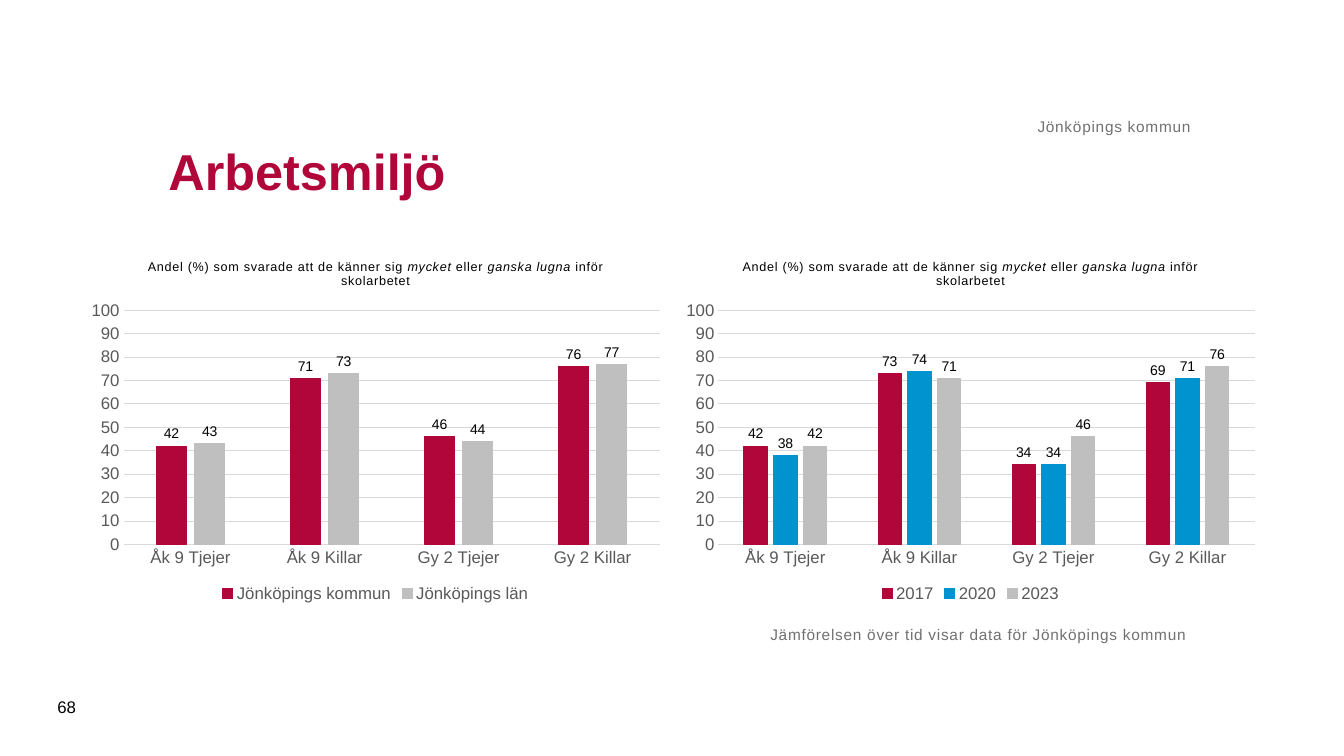
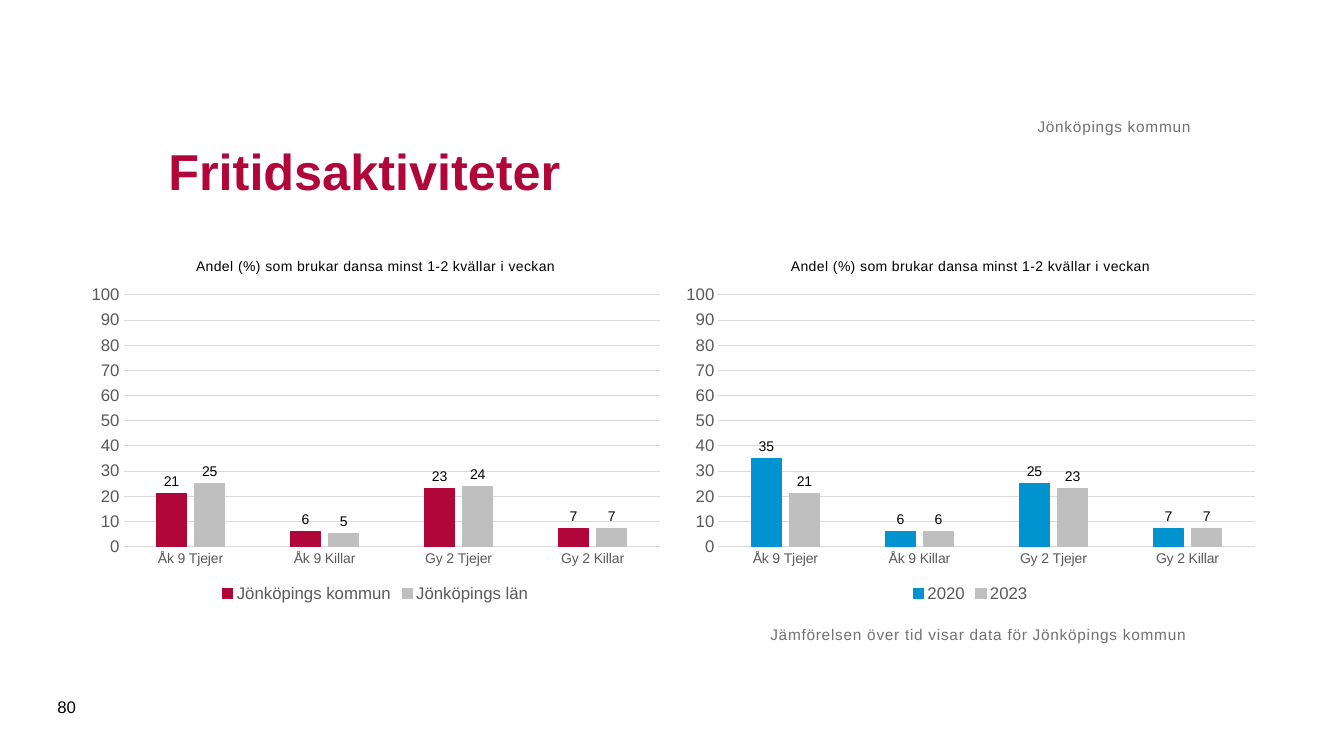
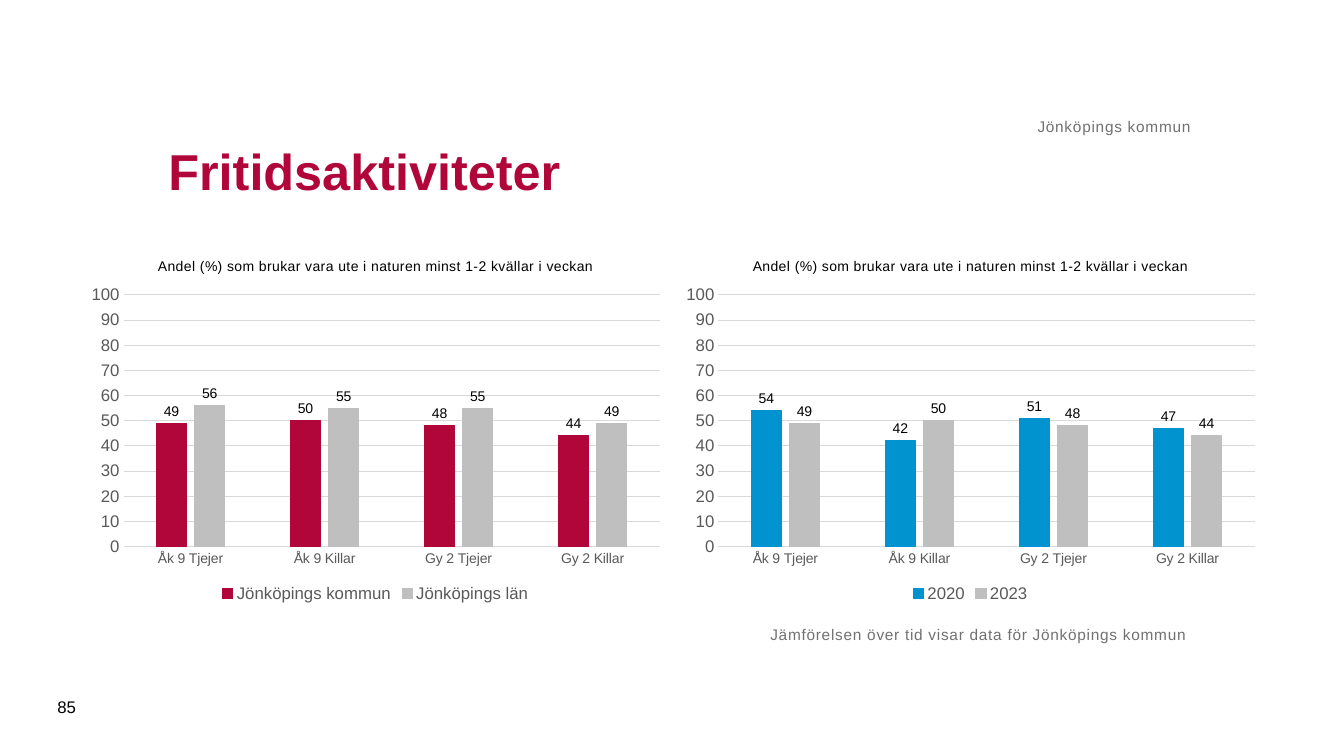
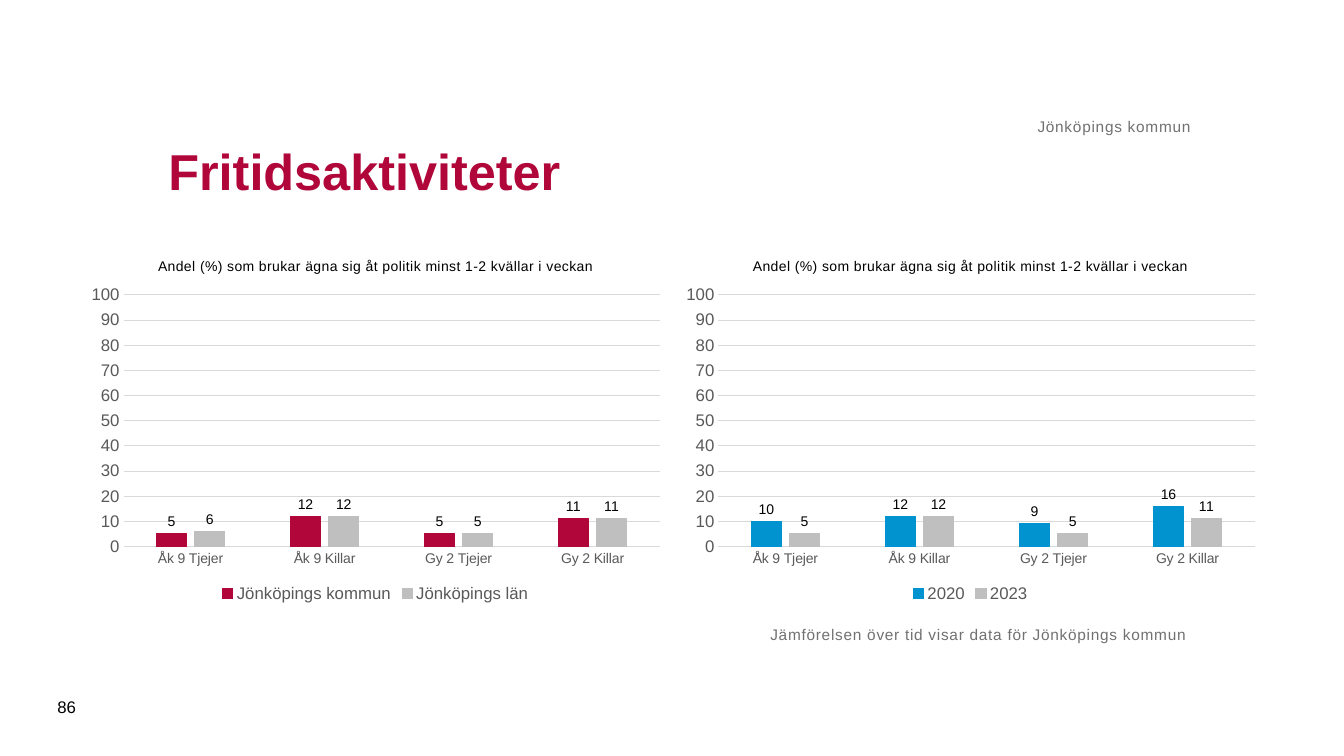
from pptx import Presentation
from pptx.chart.data import CategoryChartData
from pptx.dml.color import RGBColor
from pptx.enum.chart import XL_CHART_TYPE, XL_LABEL_POSITION, XL_LEGEND_POSITION, XL_TICK_MARK
from pptx.enum.text import MSO_ANCHOR, MSO_AUTO_SIZE, PP_ALIGN
from pptx.util import Inches, Pt

COLOURS = {
    "crimson": "B1063A",
    "blue": "0093D0",
    "silver": "BFBFBF",
    "grid": "D9D9D9",
    "axis": "595959",
    "caption": "717171",
    "black": "000000",
}

# Shared places in inches: left, top, width, height
SLIDE_W, SLIDE_H = 13.33, 7.5
CHART_LEFT, CHART_TOP, CHART_W, CHART_H = 0.79, 2.4, 5.87, 3.62
CHART_STEP = 5.9
TITLE_BOX = (1.57, 0.98, 10.24, 1.42)
MUNICIPALITY_BOX = (1.57, 0.62, 10.24, 0.73)
COMPARISON_BOX = (7.64, 6.2, 5.31, 0.94)
NUMBER_BOX = (0.47, 6.81, 0.57, 0.4)

# Shared text formats
TITLE_FONT = {"size": 36, "colour": "crimson", "bold": True}
CAPTION_FONT = {"size": 11, "colour": "caption"}
AXIS_FONT = {"size": 12, "colour": "axis"}
LABEL_FONT = {"size": 10, "colour": "black"}
NUMBER_FONT = {"size": 12, "colour": "black"}
NO_INSETS = {"margin_left": 0, "margin_top": 0, "margin_right": 0, "margin_bottom": 0}

VALUE_FORMAT = "#,##0;#,##0"
MUNICIPALITY = "Jönköpings kommun"
COUNTY = "Jönköpings län"
COMPARISON = "Jämförelsen över tid visar data för Jönköpings kommun"
GROUPS = ["Åk 9 Tjejer", "Åk 9 Killar", "Gy 2 Tjejer", "Gy 2 Killar"]
SERIES_COLOURS = {
    MUNICIPALITY: "crimson",
    COUNTY: "silver",
    "2017": "crimson",
    "2020": "blue",
    "2023": "silver",
}

# A question is a list of (text, italic) pieces
SLIDES = [
    {
        "number": "68",
        "title": "Arbetsmiljö",
        "question": [
            ("Andel (%) som svarade att de känner sig ", False),
            ("mycket", True),
            (" eller ", False),
            ("ganska lugna", True),
            (" inför skolarbetet", False),
        ],
        "question_size": 9,
        "question_spacing": 0.5,
        "group_size": 12,
        "municipality": [42, 71, 46, 76],
        "county": [43, 73, 44, 77],
        "earlier": {"2017": [42, 73, 34, 69], "2020": [38, 74, 34, 71]},
    },
    {
        "number": "80",
        "title": "Fritidsaktiviteter",
        "question": [("Andel (%) som brukar dansa minst 1-2 kvällar i veckan", False)],
        "municipality": [21, 6, 23, 7],
        "county": [25, 5, 24, 7],
        "earlier": {"2020": [35, 6, 25, 7]},
    },
    {
        "number": "85",
        "title": "Fritidsaktiviteter",
        "question": [
            ("Andel (%) som brukar vara ute i naturen minst 1-2 kvällar i veckan", False)
        ],
        "municipality": [49, 50, 48, 44],
        "county": [56, 55, 55, 49],
        "earlier": {"2020": [54, 42, 51, 47]},
    },
    {
        "number": "86",
        "title": "Fritidsaktiviteter",
        "question": [
            ("Andel (%) som brukar ägna sig åt politik minst 1-2 kvällar i veckan", False)
        ],
        "municipality": [5, 12, 5, 11],
        "county": [6, 12, 5, 11],
        "earlier": {"2020": [10, 12, 9, 16]},
    },
]


def rgb(colour):
    return RGBColor.from_string(COLOURS[colour])


def set_all(target, values):
    for attribute, value in values.items():
        setattr(target, attribute, value)


def style_font(font, size, colour, bold=False, italic=False):
    set_all(font, {"name": "Arial", "size": Pt(size), "bold": bold, "italic": italic})
    font.color.rgb = rgb(colour)


def space_letters(run, points):
    run._r.get_or_add_rPr().set("spc", str(round(points * 100)))


def style_line(line, colour):
    line.color.rgb = rgb(colour)
    line.width = Pt(0.75)


def fill_frame(frame, text, font, anchor, align=PP_ALIGN.LEFT, insets=None, spacing=0):
    set_all(frame, {
        "word_wrap": True,
        "auto_size": MSO_AUTO_SIZE.NONE,
        "vertical_anchor": anchor,
        **(insets or {}),
    })
    paragraph = frame.paragraphs[0]
    paragraph.alignment = align
    run = paragraph.add_run()
    run.text = text
    style_font(run.font, **font)
    if spacing:
        space_letters(run, spacing)


def add_text(slide, box, *args, **kwargs):
    frame = slide.shapes.add_textbox(*map(Inches, box)).text_frame
    fill_frame(frame, *args, **kwargs)


def add_title(slide, text):
    title = slide.shapes.title
    set_all(title, dict(zip(("left", "top", "width", "height"), map(Inches, TITLE_BOX))))
    fill_frame(title.text_frame, text, TITLE_FONT, MSO_ANCHOR.MIDDLE)


def add_question(chart, content):
    chart.has_title = True
    chart.chart_title.include_in_layout = False
    paragraph = chart.chart_title.text_frame.paragraphs[0]
    for text, italic in content["question"]:
        run = paragraph.add_run()
        run.text = text
        style_font(run.font, content.get("question_size", 10), "black", italic=italic)
        space_letters(run, content.get("question_spacing", 0.4))


def style_axes(chart, group_size):
    groups, percent = chart.category_axis, chart.value_axis
    for axis, size in ((groups, group_size), (percent, 12)):
        set_all(axis, {
            "major_tick_mark": XL_TICK_MARK.NONE,
            "minor_tick_mark": XL_TICK_MARK.NONE,
        })
        style_font(axis.tick_labels.font, size, "axis")
    style_line(groups.format.line, "grid")
    set_all(percent, {
        "minimum_scale": 0,
        "maximum_scale": 100,
        "major_unit": 10,
        "has_major_gridlines": True,
    })
    percent.format.line.fill.background()
    style_line(percent.major_gridlines.format.line, "grid")
    set_all(percent.tick_labels, {"number_format": VALUE_FORMAT,
                                  "number_format_is_linked": False})


def style_series(series):
    colour = SERIES_COLOURS[series.name]
    series.format.fill.solid()
    series.format.fill.fore_color.rgb = rgb(colour)
    style_line(series.format.line, colour)
    labels = series.data_labels
    set_all(labels, {
        "show_value": True,
        "position": XL_LABEL_POSITION.OUTSIDE_END,
        "number_format": VALUE_FORMAT,
        "number_format_is_linked": False,
    })
    style_font(labels.font, **LABEL_FONT)


def add_column_chart(slide, column, content, values_by_series):
    data = CategoryChartData(number_format=VALUE_FORMAT)
    data.categories = GROUPS
    for name, values in values_by_series.items():
        data.add_series(name, values)
    box = (CHART_LEFT + column * CHART_STEP, CHART_TOP, CHART_W, CHART_H)
    chart = slide.shapes.add_chart(
        XL_CHART_TYPE.COLUMN_CLUSTERED, *map(Inches, box), data).chart
    style_font(chart.font, **LABEL_FONT)
    add_question(chart, content)
    style_axes(chart, content.get("group_size", 10))
    set_all(chart.plots[0], {"gap_width": 219, "overlap": -27, "vary_by_categories": False})
    for series in chart.plots[0].series:
        style_series(series)
    chart.has_legend = True
    set_all(chart.legend, {"position": XL_LEGEND_POSITION.BOTTOM, "include_in_layout": False})
    style_font(chart.legend.font, **AXIS_FONT)


def add_survey_slide(deck, content):
    slide = deck.slides.add_slide(deck.slide_layouts[5])
    add_title(slide, content["title"])

    # Municipality against county, then development over time
    latest = content["municipality"]
    comparisons = [
        {MUNICIPALITY: latest, COUNTY: content["county"]},
        {**content["earlier"], "2023": latest},
    ]
    for column, values_by_series in enumerate(comparisons):
        add_column_chart(slide, column, content, values_by_series)

    # Captions and page number
    add_text(slide, MUNICIPALITY_BOX, MUNICIPALITY, CAPTION_FONT, MSO_ANCHOR.BOTTOM,
             PP_ALIGN.RIGHT, NO_INSETS, 0.5)
    add_text(slide, COMPARISON_BOX, COMPARISON, CAPTION_FONT, MSO_ANCHOR.TOP,
             insets=NO_INSETS, spacing=0.5)
    add_text(slide, NUMBER_BOX, content["number"], NUMBER_FONT, MSO_ANCHOR.MIDDLE)


def main():
    deck = Presentation()
    set_all(deck, {"slide_width": Inches(SLIDE_W), "slide_height": Inches(SLIDE_H)})
    for content in SLIDES:
        add_survey_slide(deck, content)
    deck.save("out.pptx")


if __name__ == "__main__":
    main()
